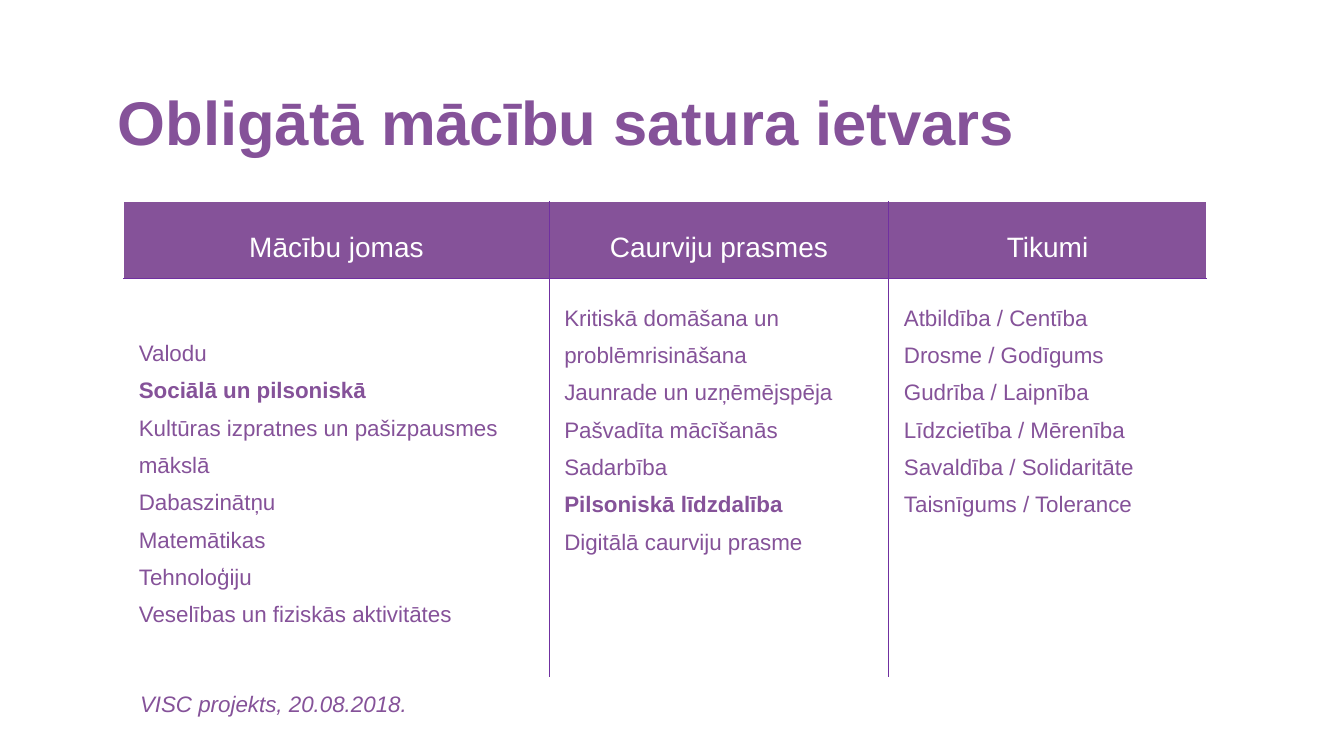
from lxml.etree import SubElement
from pptx import Presentation
from pptx.dml.color import RGBColor
from pptx.enum.text import MSO_ANCHOR, MSO_AUTO_SIZE, PP_ALIGN
from pptx.oxml.ns import qn
from pptx.util import Cm, Pt

PURPLE = RGBColor(0x85, 0x52, 0x99)
RULE = RGBColor(0x70, 0x30, 0xA0)
WHITE = RGBColor(0xFF, 0xFF, 0xFF)
FONT = "Arial"

TITLE = "Obligātā mācību satura ietvars"
SOURCE = "VISC projekts, 20.08.2018."
# heading, width in cm, anchor of the list, entries
COLUMNS = [
    ("Mācību jomas", 10.72, MSO_ANCHOR.MIDDLE, [
        "Valodu",
        "Sociālā un pilsoniskā",
        "Kultūras izpratnes un pašizpausmes mākslā",
        "Dabaszinātņu",
        "Matemātikas",
        "Tehnoloģiju",
        "Veselības un fiziskās aktivitātes",
    ]),
    ("Caurviju prasmes", 8.56, MSO_ANCHOR.TOP, [
        "Kritiskā domāšana un problēmrisināšana",
        "Jaunrade un uzņēmējspēja",
        "Pašvadīta mācīšanās",
        "Sadarbība",
        "Pilsoniskā līdzdalība",
        "Digitālā caurviju prasme",
    ]),
    ("Tikumi", 8.0, MSO_ANCHOR.TOP, [
        "Atbildība / Centība",
        "Drosme / Godīgums",
        "Gudrība / Laipnība",
        "Līdzcietība / Mērenība",
        "Savaldība / Solidaritāte",
        "Taisnīgums / Tolerance",
    ]),
]
BOLD_ENTRIES = {"Sociālā un pilsoniskā", "Pilsoniskā līdzdalība"}
ROW_HEIGHTS = [Cm(1.73), Cm(10.06)]


def write(tf, lines, size, color, spacing, align=PP_ALIGN.LEFT, bold=(), italic=False):
    """Write one paragraph per line; lines found in bold are set bold."""
    for i, line in enumerate(lines):
        p = tf.add_paragraph() if i else tf.paragraphs[0]
        p.alignment = align
        p.line_spacing = spacing
        p.space_before = Pt(0)
        r = p.add_run()
        r.text = line
        font = r.font
        font.name, font.size, font.color.rgb = FONT, Pt(size), color
        font.bold, font.italic = line in bold, italic


def set_margins(box, margin):
    box.margin_left = box.margin_right = margin
    box.margin_top = box.margin_bottom = margin


def add_borders(cell, sides):
    """Rule the given sides, named in the order L, R, T, B."""
    tcPr = cell._tc.get_or_add_tcPr()
    for side in sides:
        ln = SubElement(tcPr, qn(f"a:ln{side}"), w=str(Pt(1)))
        fill = SubElement(ln, qn("a:solidFill"))
        SubElement(fill, qn("a:srgbClr"), val=str(RULE))


def add_title(s):
    title = s.shapes.title
    title.left, title.top, title.width, title.height = Cm(2.84), Cm(1.8), Cm(29.21), Cm(3.56)
    tf = title.text_frame
    tf.auto_size = MSO_AUTO_SIZE.NONE
    tf.vertical_anchor = MSO_ANCHOR.MIDDLE
    set_margins(tf, Cm(0.13))
    tf.margin_bottom = Cm(0.94)
    write(tf, [TITLE], 44, PURPLE, 0.9, bold={TITLE})


def add_framework_table(s):
    width = sum(Cm(column[1]) for column in COLUMNS)
    table = s.shapes.add_table(2, len(COLUMNS), Cm(3.12), Cm(5.08),
                               width, sum(ROW_HEIGHTS)).table
    table.first_row = table.horz_banding = False
    for row, height in zip(table.rows, ROW_HEIGHTS):
        row.height = height

    last = len(COLUMNS) - 1
    for c, (heading, col_width, anchor, entries) in enumerate(COLUMNS):
        table.columns[c].width = Cm(col_width)
        sides = ("L" if c > 0 else "") + ("R" if c < last else "")
        head, body = table.cell(0, c), table.cell(1, c)
        for cell, edge in ((head, "B"), (body, "T")):
            set_margins(cell, Cm(0.38))
            add_borders(cell, sides + edge)

        head.fill.solid()
        head.fill.fore_color.rgb = PURPLE
        head.vertical_anchor = MSO_ANCHOR.MIDDLE
        write(head.text_frame, [heading], 20, WHITE, 1.5, PP_ALIGN.CENTER)

        body.fill.background()
        body.vertical_anchor = anchor
        write(body.text_frame, entries, 16, PURPLE, 1.5, bold=BOLD_ENTRIES)


def add_source(s):
    tf = s.shapes.add_textbox(Cm(3.4), Cm(17.35), Cm(7.77), Cm(0.86)).text_frame
    tf.word_wrap = True
    set_margins(tf, Cm(0.13))
    write(tf, [SOURCE], 16, PURPLE, 0.9, italic=True)


def main():
    prs = Presentation()
    prs.slide_width, prs.slide_height = Cm(33.87), Cm(19.05)
    s = prs.slides.add_slide(prs.slide_layouts[5])
    add_title(s)
    add_framework_table(s)
    add_source(s)
    prs.save("out.pptx")


if __name__ == "__main__":
    main()
